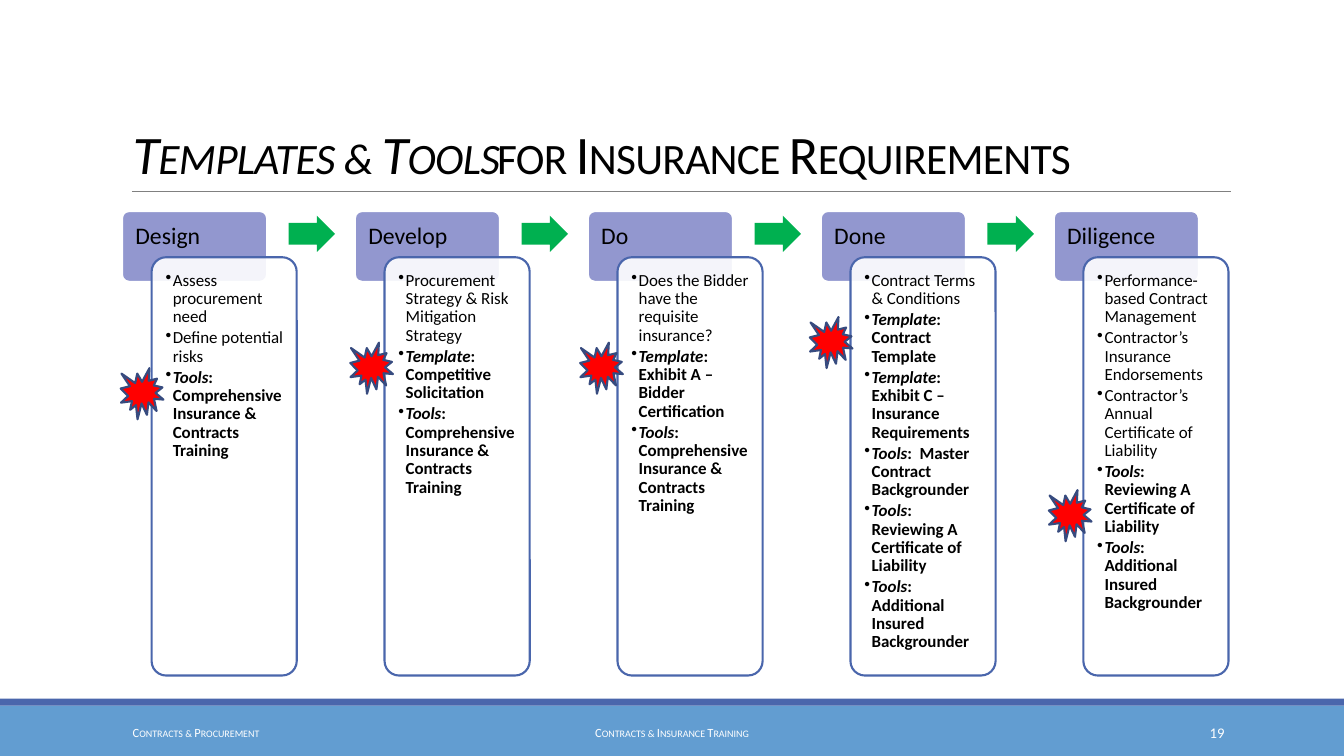
from dataclasses import dataclass

from lxml import etree
from pptx import Presentation
from pptx import util as u
from pptx.dml.color import RGBColor
from pptx.enum import shapes, text
from pptx.oxml import ns

Pt = u.Pt
KIND = shapes.MSO_SHAPE
ALIGN = text.PP_ALIGN
ANCHOR = text.MSO_ANCHOR


@dataclass(frozen=True)
class Theme:
    font: str = "Calibri"
    ink: str = "000000"
    white: str = "FFFFFF"
    band: str = "629DD1"
    accent: str = "4A66AC"
    rule: str = "808080"
    header: str = "9297CF"
    arrow: str = "00B050"
    seal: str = "FF0000"
    seal_edge: str = "374B7F"
    title_size: float = 32
    header_size: float = 14
    body_size: float = 10
    footer_size: float = 7.4
    number_size: float = 8.7
    outline: float = 1.25


THEME = Theme()
PAGE_W, PAGE_H = 793.44, 446.4
FIRST_X, PITCH = 72, 137.52
CARD_W = 85.7

TRAINING = ("Tools", "Comprehensive Insurance & Contracts Training")
REVIEWING = ("Tools", "Reviewing A Certificate of Liability")
INSURED = ("Tools", "Additional Insured Backgrounder")

# Each phase: name, bullets (label, wording), place of its starburst
PHASES = [
    ("Design", [("", "Assess procurement need"), ("", "Define potential risks"),
                TRAINING], (71.3, 217.4)),
    ("Develop", [("", "Procurement Strategy & Risk Mitigation Strategy"),
                 ("Template", "Competitive Solicitation"), TRAINING], (206.8, 202.3)),
    ("Do", [("", "Does the Bidder have the requisite insurance?"),
            ("Template", "Exhibit A – Bidder Certification"), TRAINING], (342.5, 202.3)),
    ("Done", [("", "Contract Terms & Conditions"), ("Template", "Contract Template"),
              ("Template", "Exhibit C – Insurance Requirements"),
              ("Tools", "Master Contract Backgrounder"), REVIEWING, INSURED],
     (478.1, 187.2)),
    ("Diligence", [("", "Performance-based Contract Management"),
                   ("", "Contractor’s Insurance Endorsements"),
                   ("", "Contractor’s Annual Certificate of Liability"),
                   REVIEWING, INSURED], (619.2, 289.4)),
]


def rgb(code):
    return RGBColor.from_string(code)


def add_block(page, kind, area, fill, line=None, adjust=(), opacity=None):
    """Filled preset shape; area is left, top, width, height in points."""
    block = page.shapes.add_shape(kind, *map(Pt, area))
    block.shadow.inherit = False
    block.fill.solid()
    block.fill.fore_color.rgb = rgb(fill)
    for index, value in enumerate(adjust):
        block.adjustments[index] = value
    if line:
        block.line.color.rgb = rgb(line)
        block.line.width = Pt(THEME.outline)
    else:
        block.line.fill.background()
    if opacity is not None:
        color = block.fill._xPr.find(".//" + ns.qn("a:srgbClr"))
        etree.SubElement(color, ns.qn("a:alpha"), val=str(opacity * 1000))
    return block


def add_rule(page, left, right, top):
    rule = page.shapes.add_connector(
        shapes.MSO_CONNECTOR.STRAIGHT, Pt(left), Pt(top), Pt(right), Pt(top))
    rule.line.color.rgb = rgb(THEME.rule)
    rule.line.width = Pt(0.5)
    etree.SubElement(rule._element.spPr, ns.qn("a:effectLst"))


def add_box(page, area, insets=(7.2, 3.6, 7.2, 3.6), anchor=ANCHOR.TOP):
    frame = page.shapes.add_textbox(*map(Pt, area)).text_frame
    frame.word_wrap = True
    frame.vertical_anchor = anchor
    (frame.margin_left, frame.margin_top,
     frame.margin_right, frame.margin_bottom) = map(Pt, insets)
    return frame


def add_span(para, wording, size, color=THEME.ink, bold=False, italic=False,
             small_caps=False, spacing=None):
    span = para.add_run()
    span.text = wording
    font = span.font
    font.name, font.size, font.bold, font.italic = THEME.font, Pt(size), bold, italic
    font.color.rgb = rgb(color)
    if small_caps:
        span._r.get_or_add_rPr().set("cap", "small")
    if spacing is not None:
        span._r.get_or_add_rPr().set("spc", str(round(spacing * 100)))


def add_footer(page, left, width, wording, size, align, small_caps=True):
    para = add_box(page, (left, 420.5, width, 23.8), anchor=ANCHOR.MIDDLE).paragraphs[0]
    para.alignment = align
    add_span(para, wording, size, THEME.white, small_caps=small_caps)


def add_bullets(frame, bullets):
    for index, (label, wording) in enumerate(bullets):
        para = frame.add_paragraph() if index else frame.paragraphs[0]
        para.line_spacing = 0.9
        para.space_after = Pt(1.6)
        props = para._p.get_or_add_pPr()
        props.set("marL", str(Pt(4.3)))
        props.set("indent", str(Pt(-4.3)))
        etree.SubElement(props, ns.qn("a:buChar"), char="•")
        if label:
            add_span(para, label, THEME.body_size, bold=True, italic=True)
            wording = ":  " + wording
        add_span(para, wording, THEME.body_size, bold=bool(label))


def add_phase(page, left, name, bullets):
    # Header tab
    add_block(page, KIND.ROUNDED_RECTANGLE, (left, 124.6, CARD_W, 41.8),
              THEME.header, THEME.white, [0.1])
    para = add_box(page, (left, 124.6, CARD_W, 28), (7.9, 7.9, 7.9, 4.3)).paragraphs[0]
    para.line_spacing = 0.9
    add_span(para, name, THEME.header_size)
    # Card with bullets
    add_block(page, KIND.ROUNDED_RECTANGLE, (left + 17.5, 151.9, CARD_W, 247),
              THEME.white, THEME.accent, [0.1], opacity=90)
    frame = add_box(page, (left + 20, 154.6, 80.7, 242), (5.7, 5.7, 5, 5.7))
    add_bullets(frame, bullets)


def main():
    deck = Presentation()
    deck.slide_width, deck.slide_height = Pt(PAGE_W), Pt(PAGE_H)
    page = deck.slides.add_slide(deck.slide_layouts[6])

    # Bottom band and title rule
    add_block(page, KIND.RECTANGLE, (0, 416.7, PAGE_W, PAGE_H - 416.7), THEME.band)
    add_block(page, KIND.RECTANGLE, (0, 412.5, PAGE_W, 4.2), THEME.accent)
    add_rule(page, 77.8, 726.5, 113)

    # Title
    para = add_box(page, (71.3, 18.7, 654.5, 94.3), anchor=ANCHOR.BOTTOM).paragraphs[0]
    para.line_spacing = 0.85
    for wording, italic in (("Templates & Tools ", True),
                            ("for Insurance Requirements", False)):
        add_span(para, wording, THEME.title_size, italic=italic,
                 small_caps=True, spacing=-0.4)

    # Footer
    add_footer(page, 71.3, 160.6, "Contracts & Procurement", THEME.footer_size, ALIGN.LEFT)
    add_footer(page, 239.8, 313.9, "Contracts & Insurance Training",
               THEME.footer_size, ALIGN.CENTER)
    add_footer(page, 644.4, 85.7, "19", THEME.number_size, ALIGN.RIGHT, small_caps=False)

    # Phases, joined by arrows
    for index, (name, bullets, _) in enumerate(PHASES):
        left = FIRST_X + index * PITCH
        add_phase(page, left, name, bullets)
        if index < len(PHASES) - 1:
            add_block(page, KIND.RIGHT_ARROW, (left + 98.4, 127.4, 27.4, 21.4),
                      THEME.arrow, adjust=[0.6, 0.5])

    # Starbursts marking the templates and tools
    for _, _, (left, top) in PHASES:
        add_block(page, KIND.EXPLOSION1, (left, top, 25.2, 30.2),
                  THEME.seal, THEME.seal_edge)

    deck.save("out.pptx")


if __name__ == "__main__":
    main()
